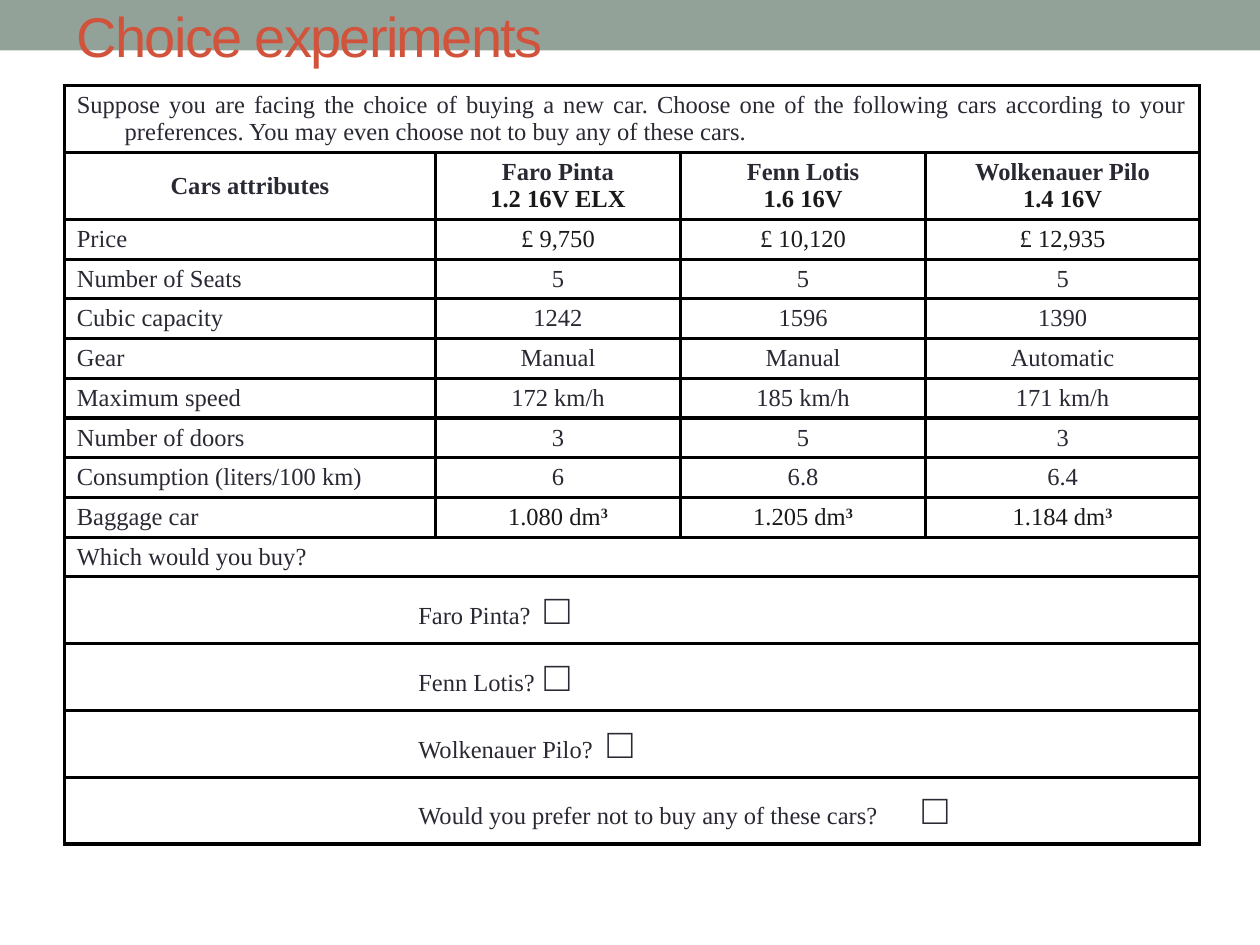
"""Build the choice experiment slide with its table of cars."""
import typing

import lxml.etree
import pptx
import pptx.dml.color
import pptx.enum.shapes
import pptx.enum.text
import pptx.oxml.ns
import pptx.util

Inches = pptx.util.Inches
Pt = pptx.util.Pt
Color = pptx.dml.color.RGBColor
Align = pptx.enum.text.PP_ALIGN
Anchor = pptx.enum.text.MSO_ANCHOR
qn = pptx.oxml.ns.qn

SAGE = Color(0x93, 0xA2, 0x99)
RUST = Color(0xD2, 0x53, 0x3C)
SLATE = Color(0x29, 0x29, 0x34)
COAL = Color(0x19, 0x19, 0x19)
BLACK = Color(0, 0, 0)

WIDTHS = [2.71, 0.23, 1.94, 1.95, 2.17]
TALL, SHORT = 0.53, 0.31
HANG = 0.38
INTRO = (
    "Suppose you are facing the choice of buying a new car. Choose one of the "
    "following cars according to your preferences. You may even choose not to "
    "buy any of these cars."
)


class Car(typing.NamedTuple):
    name: str
    model: str


class Trait(typing.NamedTuple):
    label: str
    values: tuple[str, str, str]
    color: Color = SLATE
    power: str = ""


class Option(typing.NamedTuple):
    text: str
    tab: float


CARS = [
    Car("Faro Pinta", "1.2 16V ELX"),
    Car("Fenn Lotis", "1.6 16V"),
    Car("Wolkenauer Pilo", "1.4 16V"),
]
TRAITS = [
    Trait("Price", ("£ 9,750", "£ 10,120", "£ 12,935"), COAL),
    Trait("Number of Seats", ("5", "5", "5")),
    Trait("Cubic capacity", ("1242", "1596", "1390")),
    Trait("Gear", ("Manual", "Manual", "Automatic")),
    Trait("Maximum speed", ("172 km/h", "185 km/h", "171 km/h")),
    Trait("Number of doors", ("3", "5", "3")),
    Trait("Consumption (liters/100 km)", ("6", "6.8", "6.4")),
    Trait("Baggage car", ("1.080 dm", "1.205 dm", "1.184 dm"), COAL, "3"),
]
OPTIONS = [
    Option(CARS[0].name + "?", 3.71),
    Option(CARS[1].name + "?", 3.69),
    Option(CARS[2].name + "?", 3.67),
    Option("Would you prefer not to buy any of these cars?", 3.84),
]


def style(run, color: Color = SLATE, bold: bool = False, size: int = 14) -> None:
    run.font.name = "Times New Roman"
    run.font.size = Pt(size)
    run.font.bold = bold
    run.font.color.rgb = color


def write(cell, text: str, align=Align.LEFT, color: Color = SLATE, bold: bool = False) -> None:
    cell.text_frame.text = text
    cell.vertical_anchor = Anchor.MIDDLE
    for para in cell.text_frame.paragraphs:
        para.alignment = align
        props = para._p.get_or_add_pPr()
        props.set("marL", str(Inches(HANG)))
        props.set("indent", str(-Inches(HANG)))
        style(para.runs[0], color, bold)


def border(cell, hidden: str = "") -> None:
    cell.fill.background()
    props = cell._tc.get_or_add_tcPr()
    for spot, side in enumerate("LRTB"):
        line = lxml.etree.Element(qn("a:ln" + side), w=str(Pt(2)))
        if side == hidden:
            lxml.etree.SubElement(line, qn("a:noFill"))
        else:
            fill = lxml.etree.SubElement(line, qn("a:solidFill"))
            lxml.etree.SubElement(fill, qn("a:srgbClr"), val=str(BLACK))
        props.insert(spot, line)


def put_trait(table, row: int, trait: Trait) -> None:
    write(table.cell(row, 0), trait.label)
    for col, value in enumerate(trait.values, 2):
        cell = table.cell(row, col)
        write(cell, value, Align.CENTER, trait.color)
        if trait.power:
            run = cell.text_frame.paragraphs[0].add_run()
            run.text = trait.power
            style(run, trait.color, True)
            run.font._element.set("baseline", "30000")


def put_option(table, row: int, option: Option) -> None:
    cell = table.cell(row, 1)
    write(cell, option.text + "\t")
    para = cell.text_frame.paragraphs[0]
    props = para._p.get_or_add_pPr()
    props.set("marL", "0")
    props.set("indent", "0")
    tabs = lxml.etree.SubElement(props, qn("a:tabLst"))
    lxml.etree.SubElement(tabs, qn("a:tab"), pos=str(Inches(option.tab)), algn="l")
    box = para.add_run()
    box.text = "□"
    style(box, bold=True, size=24)


def put_head(slide) -> None:
    band = slide.shapes.add_shape(
        pptx.enum.shapes.MSO_SHAPE.RECTANGLE, 0, 0, Inches(10), Inches(0.4)
    )
    band.shadow.inherit = False
    band.fill.solid()
    band.fill.fore_color.rgb = SAGE
    band.line.fill.background()
    slide.shapes._spTree.insert(2, band._element)

    title = slide.shapes.title
    title.left, title.top = Inches(0.51), Inches(-0.35)
    title.width, title.height = Inches(9), Inches(1.25)
    title.text_frame.text = "Choice experiments"
    title.text_frame.vertical_anchor = Anchor.MIDDLE
    para = title.text_frame.paragraphs[0]
    para.alignment = Align.LEFT
    font = para.runs[0].font
    font.name = "Arial"
    font.size = Pt(32)
    font.color.rgb = RUST
    font._element.set("spc", "-100")


def put_table(slide) -> None:
    ask = 2 + len(TRAITS)
    heights = [TALL] * 2 + [SHORT] * (len(TRAITS) + 1) + [TALL] * len(OPTIONS)
    table = slide.shapes.add_table(
        len(heights), len(WIDTHS), Inches(0.51), Inches(0.68),
        Inches(sum(WIDTHS)), Inches(sum(heights)),
    ).table
    table.first_row = table.horz_banding = False
    for column, width in zip(table.columns, WIDTHS):
        column.width = Inches(width)
    for row, height in enumerate(heights):
        table.rows[row].height = Inches(height)
        for col in range(len(WIDTHS)):
            hidden = {0: "R", 1: "L"}.get(col, "") if row > ask else ""
            border(table.cell(row, col), hidden)
        first = 1 if row > ask else 0
        last = 4 if row in (0, ask) or row > ask else 1
        table.cell(row, first).merge(table.cell(row, last))

    write(table.cell(0, 0), INTRO, Align.JUSTIFY)
    table.cell(0, 0).vertical_anchor = Anchor.TOP
    write(table.cell(1, 0), "Cars attributes", Align.CENTER, bold=True)
    for col, car in enumerate(CARS, 2):
        cell = table.cell(1, col)
        write(cell, "\n".join(car), Align.CENTER, bold=True)
        style(cell.text_frame.paragraphs[1].runs[0], COAL, True)
    for row, trait in enumerate(TRAITS, 2):
        put_trait(table, row, trait)
    write(table.cell(ask, 0), "Which would you buy?")
    for row, option in enumerate(OPTIONS, ask + 1):
        put_option(table, row, option)


def main() -> None:
    deck = pptx.Presentation()
    deck.slide_width, deck.slide_height = Inches(10), Inches(7.5)
    slide = deck.slides.add_slide(deck.slide_layouts[5])
    put_head(slide)
    put_table(slide)
    deck.save("out.pptx")


if __name__ == "__main__":
    main()
